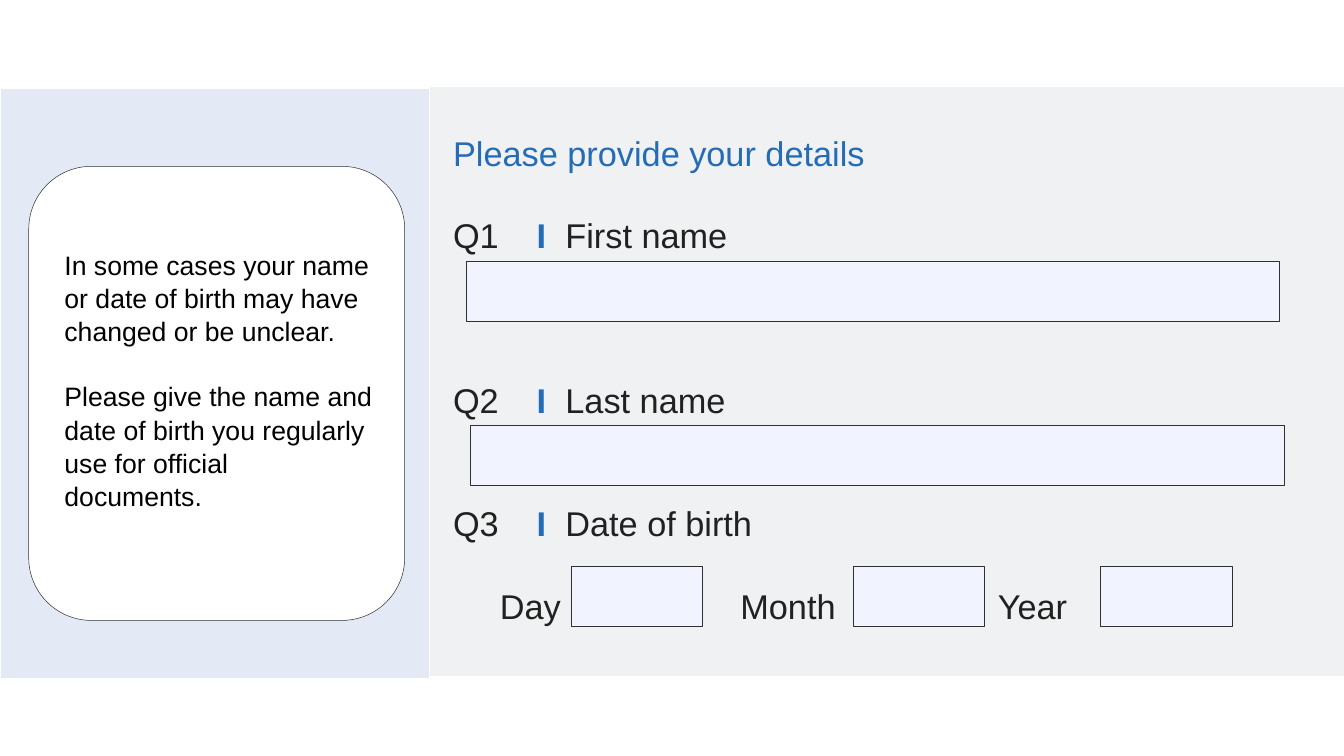
from pptx import Presentation
from pptx import util as u
from pptx.dml.color import RGBColor
from pptx.enum import shapes, text
from pptx.oxml import parse_xml
from pptx.oxml.ns import nsdecls

WHITE = RGBColor(0xFF, 0xFF, 0xFF)
BLACK = RGBColor(0, 0, 0)
PALE_BLUE = RGBColor(0xE3, 0xE9, 0xF5)
PALE_GREY = RGBColor(0xEF, 0xF1, 0xF2)
FIELD_FILL = RGBColor(0xF1, 0xF4, 0xFF)
OUTLINE = RGBColor(0x30, 0x30, 0x30)
INK = RGBColor(0x21, 0x21, 0x21)
ACCENT = RGBColor(0x25, 0x6C, 0xB7)

FONT = "Arial"
FORM_SIZE, HELP_SIZE = 49, 38
COLUMNS, ROWS = 80, 45
WIDTH, HEIGHT = u.Inches(26.67), u.Inches(15)

# Boxes are (column, row, columns wide, rows high) on the slide grid.
HELP_PANEL = (0, 5.25, 25.56, 35.1)
FORM_PANEL = (25.56, 5.13, 54.44, 35.1)

# Form lines, in rows below the top of the form panel
FIRST_LINE, LINE_PITCH = 3.96, 2.45
MARGIN = 1.41
FIELD_HEIGHT = 3.57
QUESTION_TABS = (1.66, 2.23)  # inches: accent bar, question wording

# number, wording, line, answer field (column, row) or None
QUESTIONS = [
    ("Q1", "First name", 2, (2.19, 10.41)),
    ("Q2", "Last name", 6, (2.46, 20.16)),
    ("Q3", "Date of birth", 9, None),
]
ANSWER_WIDTH = 48.42
# label, label column, field column
DATE_PARTS = [("Day", 4.2, 8.46), ("Month", 18.51, 25.2), ("Year", 33.84, 39.96)]
DATE_LINE, DATE_ROW, DATE_WIDTH = 11, 28.59, 7.8

HELP_TEXT = [
    "In some cases your name or date of birth may have changed or be unclear.",
    "Please give the name and date of birth you regularly use for official documents.",
]


def within(panel, column, row, wide, high):
    """Slide box of a part whose column and row count from the panel's corner."""
    return panel[0] + column, panel[1] + row, wide, high


def lengths(box):
    column, row = WIDTH / COLUMNS, HEIGHT / ROWS
    return [int(n * unit) for n, unit in zip(box, (column, row, column, row))]


def add_block(slide, box, fill, line=OUTLINE, kind=shapes.MSO_SHAPE.RECTANGLE):
    block = slide.shapes.add_shape(kind, *lengths(box))
    block.shadow.inherit = False
    block.fill.solid()
    block.fill.fore_color.rgb = fill
    block.line.color.rgb = line
    block.line.width = u.Pt(0.75)
    return block


def set_font(font, size, color):
    font.name, font.size, font.bold = FONT, u.Pt(size), False
    font.color.rgb = color


def set_frame(frame, anchor, inset=0):
    frame.word_wrap = True
    frame.auto_size = text.MSO_AUTO_SIZE.NONE
    frame.vertical_anchor = anchor
    frame.margin_left = frame.margin_right = u.Inches(inset)
    frame.margin_top = frame.margin_bottom = u.Inches(inset)


def line_box(panel, line, column, wide):
    """Box of one line of form text, centred on that line."""
    row = FIRST_LINE + (line - 0.5) * LINE_PITCH
    return within(panel, column, row, wide, LINE_PITCH)


def add_label(slide, box):
    """Empty one-line label; returns its paragraph."""
    frame = slide.shapes.add_textbox(*lengths(box)).text_frame
    set_frame(frame, text.MSO_ANCHOR.MIDDLE)
    paragraph = frame.paragraphs[0]
    set_font(paragraph.font, FORM_SIZE, INK)
    return paragraph


def add_tab_stops(paragraph, stops):
    tabs = "".join(f'<a:tab pos="{u.Inches(stop)}" algn="l"/>' for stop in stops)
    properties = paragraph._p.get_or_add_pPr()
    properties.insert(0, parse_xml(f'<a:tabLst {nsdecls("a")}>{tabs}</a:tabLst>'))


def add_help(slide, panel):
    add_block(slide, panel, PALE_BLUE, WHITE)
    card = within(panel, 1.71, 4.65, 22.38, 27.03)
    add_block(slide, card, WHITE, kind=shapes.MSO_SHAPE.ROUNDED_RECTANGLE)
    advice = within(panel, 3.54, 9.18, 18.96, 20.31)
    frame = slide.shapes.add_textbox(*lengths(advice)).text_frame
    set_frame(frame, text.MSO_ANCHOR.TOP, 0.1)
    for i, wording in enumerate(HELP_TEXT):
        paragraph = frame.add_paragraph() if i else frame.paragraphs[0]
        paragraph.text = wording
        paragraph.line_spacing = 1.04
        paragraph.space_before = u.Pt(1.2 * HELP_SIZE if i else 0)
        set_font(paragraph.font, HELP_SIZE, BLACK)


def add_title(slide, box):
    title = slide.shapes.title
    title.left, title.top, title.width, title.height = lengths(box)
    set_frame(title.text_frame, text.MSO_ANCHOR.MIDDLE)
    title.text_frame.text = "Please provide your details"
    paragraph = title.text_frame.paragraphs[0]
    paragraph.alignment = text.PP_ALIGN.LEFT
    set_font(paragraph.font, FORM_SIZE, ACCENT)
    slide.shapes._spTree.append(title._element)  # in front of the panels


def add_question(slide, panel, number, wording, line, field):
    paragraph = add_label(slide, line_box(panel, line, MARGIN, 50))
    add_tab_stops(paragraph, QUESTION_TABS)
    paragraph.add_run().text = f"{number}\t"
    bar = paragraph.add_run()
    bar.text = "I"
    bar.font.bold = True
    bar.font.color.rgb = ACCENT
    paragraph.add_run().text = f"\t{wording}"
    if field:
        add_block(slide, within(panel, *field, ANSWER_WIDTH, FIELD_HEIGHT), FIELD_FILL)


def add_date(slide, panel):
    for label, label_column, field_column in DATE_PARTS:
        wide = field_column - label_column
        add_label(slide, line_box(panel, DATE_LINE, label_column, wide)).text = label
        field = within(panel, field_column, DATE_ROW, DATE_WIDTH, FIELD_HEIGHT)
        add_block(slide, field, FIELD_FILL)


def add_form(slide, panel):
    add_block(slide, panel, PALE_GREY, WHITE)
    add_title(slide, line_box(panel, 0, MARGIN, 50))
    for question in QUESTIONS:
        add_question(slide, panel, *question)
    add_date(slide, panel)


def main():
    deck = Presentation()
    deck.slide_width, deck.slide_height = WIDTH, HEIGHT
    slide = deck.slides.add_slide(deck.slide_layouts[5])
    add_help(slide, HELP_PANEL)
    add_form(slide, FORM_PANEL)
    deck.save("out.pptx")


if __name__ == "__main__":
    main()
